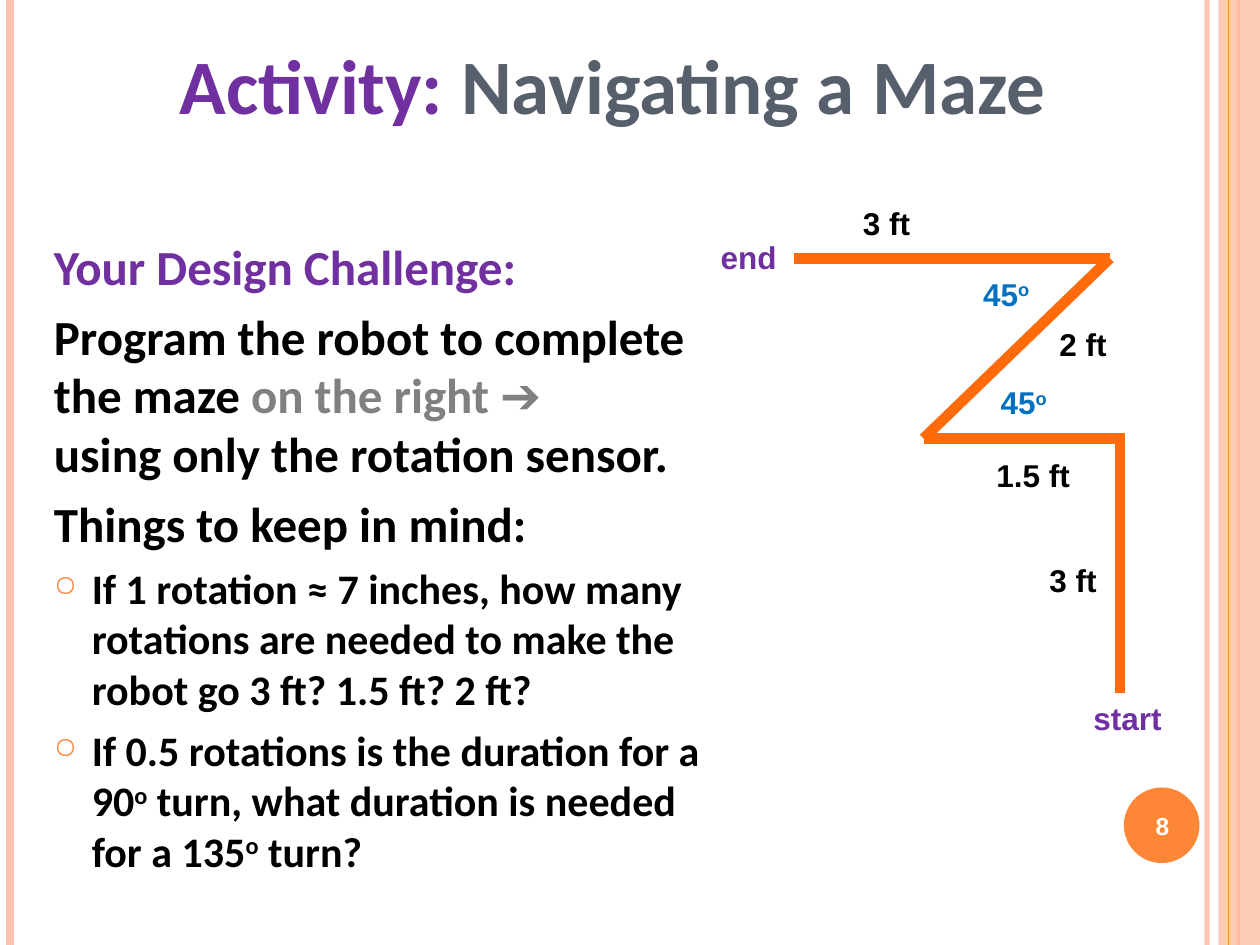
from lxml import etree
from pptx import Presentation
from pptx import util as u
from pptx.dml.color import RGBColor
from pptx.enum import shapes, text
from pptx.oxml.ns import qn

COLUMN = ROW = u.Inches(0.1)
COLUMNS, ROWS = 100, 75

PEACH = RGBColor(0xFE, 0xC3, 0xAE)
ORANGE = RGBColor(0xFE, 0x86, 0x37)
MAZE = RGBColor(0xFF, 0x6B, 0x0A)
PURPLE = RGBColor(0x70, 0x30, 0xA0)
SLATE = RGBColor(0x57, 0x5F, 0x6D)
BLUE = RGBColor(0x00, 0x70, 0xC0)
GRAY = RGBColor(0x80, 0x80, 0x80)
BLACK = RGBColor(0, 0, 0)
WHITE = RGBColor(255, 255, 255)

CENTER = text.PP_ALIGN.CENTER
HEADING = {"name": "Calibri", "size": u.Pt(28), "bold": True}
BULLET = {**HEADING, "size": u.Pt(24)}
TITLE = {**HEADING, "size": u.Pt(44)}
LABEL = {"name": "Arial", "size": u.Pt(18), "bold": True}
NUMBER = {**LABEL, "size": u.Pt(14)}
DEGREE = "º"


def grid(left, top, width, height):
    return [round(value * unit) for value, unit in
            zip((left, top, width, height), (COLUMN, ROW) * 2)]


def apply(target, values):
    for name, value in values.items():
        setattr(target, name, value)


def set_alpha(fill, percent):
    color = fill._xPr.find(f".//{qn('a:srgbClr')}")
    etree.SubElement(color, qn("a:alpha"), val=str(percent * 1000))


def add_line(slide, start, end, color, width, alpha=100):
    line = slide.shapes.add_connector(
        shapes.MSO_CONNECTOR.STRAIGHT, *grid(*start, *end))
    line.line.color.rgb = color
    line.line.width = u.Pt(width)
    if alpha < 100:
        set_alpha(line.line.fill, alpha)
    etree.SubElement(line._element.spPr, qn("a:effectLst"))


def add_solid(slide, kind, box, color, alpha=100):
    shape = slide.shapes.add_shape(kind, *grid(*box))
    shape.shadow.inherit = False
    shape.fill.solid()
    shape.fill.fore_color.rgb = color
    shape.line.fill.background()
    if alpha < 100:
        set_alpha(shape.fill, alpha)


def add_frame(slide, box, **values):
    frame = slide.shapes.add_textbox(*grid(*box)).text_frame
    apply(frame, {"word_wrap": True, **values})
    return frame


def add_run(paragraph, content, font, color, raised=False):
    run = paragraph.add_run()
    run.text = content
    apply(run.font, font)
    run.font.color.rgb = color
    if raised:
        run.font._element.set("baseline", "30000")


def add_degrees(paragraph, content, font, color):
    pieces = content.split(DEGREE)
    for index, piece in enumerate(pieces):
        if index:
            add_run(paragraph, "o", font, color, raised=True)
        if piece:
            add_run(paragraph, piece, font, color)


def add_label(slide, box, content, color, wrap=False, **values):
    frame = add_frame(slide, box, word_wrap=wrap,
                      auto_size=text.MSO_AUTO_SIZE.SHAPE_TO_FIT_TEXT)
    apply(frame.paragraphs[0], values)
    add_degrees(frame.paragraphs[0], content, LABEL, color)


def add_bullet(paragraph):
    properties = paragraph._p.get_or_add_pPr()
    apply_indent = {"marL": u.Inches(0.3), "indent": -u.Inches(0.3)}
    for name, value in apply_indent.items():
        properties.set(name, str(value))
    color = etree.SubElement(properties, qn("a:buClr"))
    etree.SubElement(color, qn("a:srgbClr"), val=str(ORANGE))
    etree.SubElement(properties, qn("a:buSzPct"), val="70000")
    etree.SubElement(properties, qn("a:buChar"), char="○")


def add_decoration(slide):
    for column, color, width, alpha in (
            (95.8, PEACH, 3, 93), (0.8, PEACH, 4.5, 100), (98.3, ORANGE, 1.5, 100)):
        add_line(slide, (column, 0), (column, ROWS), color, width, alpha)
    add_solid(slide, shapes.MSO_SHAPE.RECTANGLE, (96.7, 0, 3.3, ROWS), PEACH, 87)
    add_line(slide, (97.5, 0), (97.5, ROWS), ORANGE, 0.75)
    add_solid(slide, shapes.MSO_SHAPE.OVAL, (89.2, 62.5, 6, 6), ORANGE)


def add_challenge(slide):
    frame = add_frame(slide, (3.3, 18.3, 53.8, 52.5))
    heading = frame.paragraphs[0]
    add_run(heading, "Your Design Challenge:", HEADING, PURPLE)
    task = frame.add_paragraph()
    add_run(task, "Program the robot to complete the maze ", HEADING, BLACK)
    add_run(task, "on the right ➔ ", HEADING, GRAY)
    task.add_line_break()
    add_run(task, "using only the rotation sensor.", HEADING, BLACK)
    add_run(frame.add_paragraph(), "Things to keep in mind:", HEADING, BLACK)
    for content in (
            "If 1 rotation ≈ 7 inches, how many rotations are needed to make "
            "the robot go 3 ft? 1.5 ft? 2 ft?",
            "If 0.5 rotations is the duration for a 90º turn, what duration is "
            "needed for a 135º turn?"):
        paragraph = frame.add_paragraph()
        add_bullet(paragraph)
        add_degrees(paragraph, content, BULLET, BLACK)
    for paragraph in frame.paragraphs:
        paragraph.space_before = u.Pt(6)


def add_heading(slide):
    number = add_frame(slide, (88.9, 62.7, 6.7, 5.7),
                       vertical_anchor=text.MSO_ANCHOR.MIDDLE).paragraphs[0]
    number.alignment = CENTER
    add_run(number, "8", NUMBER, WHITE)
    title = add_frame(slide, (1.7, 3, 93.9, 7.8),
                      vertical_anchor=text.MSO_ANCHOR.BOTTOM).paragraphs[0]
    title.alignment = CENTER
    add_run(title, "Activity: ", TITLE, PURPLE)
    add_run(title, "Navigating a Maze", TITLE, SLATE)


def add_maze(slide):
    for start, end in (((88.9, 55), (88.9, 34.8)), ((89.3, 34.8), (73.3, 34.8)),
                       ((73.3, 34.8), (88.1, 20.5)), ((88.1, 20.5), (63, 20.5))):
        add_line(slide, start, end, MAZE, 6)
    add_label(slide, (85.8, 55, 7.5, 4), "start", PURPLE)
    add_label(slide, (56.2, 18.4, 6.5, 4), "end", PURPLE)
    for left, top, content in ((82.3, 44, "3 ft"), (83.1, 25.3, "2 ft"),
                               (67.5, 15.7, "3 ft")):
        add_label(slide, (left, top, 5.8, 4), content, BLACK)
    add_label(slide, (78.1, 35.7, 8.2, 4), "1.5 ft", BLACK, wrap=True)
    add_label(slide, (77.6, 29.9, 7.3, 4.1), "45º", BLUE, wrap=True, alignment=CENTER)
    add_label(slide, (76.9, 21.3, 5.9, 4), "45º", BLUE, alignment=CENTER)


def main():
    presentation = Presentation()
    apply(presentation, {"slide_width": COLUMNS * COLUMN, "slide_height": ROWS * ROW})
    slide = presentation.slides.add_slide(presentation.slide_layouts[6])
    add_decoration(slide)
    add_challenge(slide)
    add_heading(slide)
    add_maze(slide)
    presentation.save("out.pptx")


if __name__ == "__main__":
    main()
